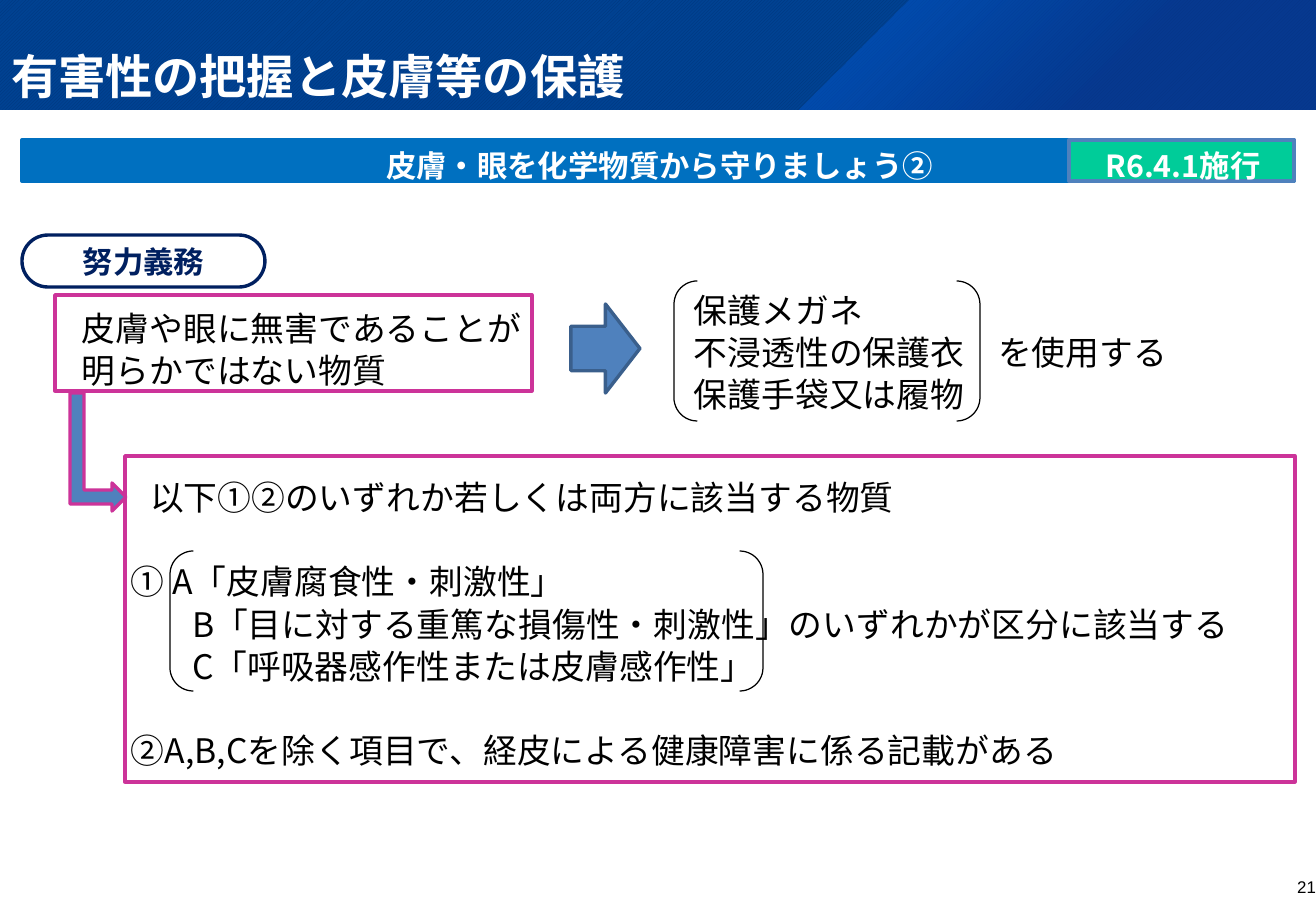
from lxml.etree import SubElement
from pptx import Presentation
from pptx.dml.color import RGBColor
from pptx.enum.dml import MSO_PATTERN
from pptx.enum.shapes import MSO_SHAPE
from pptx.enum.text import MSO_ANCHOR, MSO_AUTO_SIZE, PP_ALIGN
from pptx.oxml import parse_xml
from pptx.oxml.ns import nsdecls, qn
from pptx.util import Pt

EMU_PER_PX = 7526
SLIDE_WIDTH, SLIDE_HEIGHT, HEADER_HEIGHT = 1316, 911, 110
JAPANESE = "Noto Sans CJK JP"
WHITE, BLACK, NAVY = "FFFFFF", "000000", "002060"
BLUE, GREEN, STEEL, MAGENTA = "0070C0", "00CC99", "4F81BD", "CC3399"
LINE_PITCH = 25


def px(length):
    return length * EMU_PER_PX


def color(hex_string):
    return RGBColor.from_string(hex_string)


def place(shape, left, top, width, height):
    shape.left, shape.top = px(left), px(top)
    shape.width, shape.height = px(width), px(height)


def paint(shape, fill=None, line=None, weight=2):
    if fill:
        shape.fill.solid()
        shape.fill.fore_color.rgb = color(fill)
    else:
        shape.fill.background()
    if line:
        shape.line.color.rgb = color(line)
        shape.line.width = Pt(weight)
    else:
        shape.line.fill.background()


def add_figure(slide, kind, box, fill=None, line=None, weight=2):
    figure = slide.shapes.add_shape(kind, *map(px, box))
    figure.shadow.inherit = False
    paint(figure, fill, line, weight)
    return figure


def set_frame(shape, insets, anchor):
    frame = shape.text_frame
    frame.word_wrap = True
    frame.auto_size = MSO_AUTO_SIZE.NONE
    frame.vertical_anchor = anchor
    frame.margin_left, frame.margin_top, frame.margin_right, frame.margin_bottom = map(px, insets)
    return frame


def add_run(paragraph, text, size, hex_color, bold=False, typeface=JAPANESE):
    run = paragraph.add_run()
    run.text = text
    run.font.size = Pt(size)
    run.font.bold = bold
    run.font.color.rgb = color(hex_color)
    run.font.name = typeface
    SubElement(run.font._element, qn("a:ea")).set("typeface", typeface)


def write_label(shape, text, size, hex_color, insets, align=PP_ALIGN.CENTER,
                anchor=MSO_ANCHOR.MIDDLE, bold=True, typeface=JAPANESE):
    paragraph = set_frame(shape, insets, anchor).paragraphs[0]
    paragraph.alignment = align
    add_run(paragraph, text, size, hex_color, bold, typeface)


def write_lines(shape, lines, insets):
    frame = set_frame(shape, insets, MSO_ANCHOR.TOP)
    for number, (text, indent, gap_after) in enumerate(lines):
        paragraph = frame.add_paragraph() if number else frame.paragraphs[0]
        properties = paragraph._p.get_or_add_pPr()
        properties.set("marL", str(px(indent)))
        properties.set("indent", "0")
        SubElement(properties, qn("a:buNone"))
        paragraph.alignment = PP_ALIGN.LEFT
        paragraph.line_spacing = Pt(LINE_PITCH)
        paragraph.space_before = Pt(0)
        paragraph.space_after = Pt(gap_after)
        add_run(paragraph, text, 20, BLACK)


def add_header(slide):
    band = add_figure(slide, MSO_SHAPE.RECTANGLE, (0, 0, SLIDE_WIDTH, HEADER_HEIGHT))
    band.fill.patterned()
    band.fill.pattern = MSO_PATTERN.DARK_UPWARD_DIAGONAL
    band.fill.fore_color.rgb = color("003579")
    band.fill.back_color.rgb = color("004292")

    outline = slide.shapes.build_freeform(910, 0, scale=EMU_PER_PX)
    outline.add_line_segments([(SLIDE_WIDTH, 0), (SLIDE_WIDTH, HEADER_HEIGHT), (799, HEADER_HEIGHT)])
    sheen = outline.convert_to_shape()
    sheen.shadow.inherit = False
    paint(sheen)
    stops = "".join(
        f'<a:gs pos="{position}"><a:srgbClr val="{tone}"><a:alpha val="{alpha}"/></a:srgbClr></a:gs>'
        for position, tone, alpha in [(0, "0064DF", 50000), (62000, "0C338E", 55000)])
    gradient = parse_xml(
        f'<a:gradFill {nsdecls("a")} rotWithShape="1"><a:gsLst>{stops}</a:gsLst>'
        '<a:path path="circle"><a:fillToRect r="100000" b="100000"/></a:path></a:gradFill>')
    properties = sheen._element.spPr
    properties.replace(properties.find(qn("a:noFill")), gradient)

    for depth, part in enumerate((band, sheen), start=2):
        slide.shapes._spTree.insert(depth, part._element)


def add_title(slide):
    title = slide.shapes.title
    place(title, 0, 0, SLIDE_WIDTH, HEADER_HEIGHT)
    write_label(title, "有害性の把握と皮膚等の保護", 28, WHITE, (11, 6, 11, 6),
                PP_ALIGN.LEFT, MSO_ANCHOR.BOTTOM)


def add_banner(slide):
    for text, left, width, fill, line in [
        ("皮膚・眼を化学物質から守りましょう②", 22, 1272, BLUE, BLUE),
        ("R6.4.1施行", 1069, 225, GREEN, STEEL),
    ]:
        bar = add_figure(slide, MSO_SHAPE.RECTANGLE, (left, 140, width, 41), fill, line)
        write_label(bar, text, 18, WHITE, (15, 10, 12, 0))


def add_duty(slide):
    duty = add_figure(slide, MSO_SHAPE.ROUNDED_RECTANGLE, (22, 235, 243, 52), line=NAVY)
    duty.adjustments[0] = 0.5
    write_label(duty, "努力義務", 18, NAVY, (4, 0, 4, 0))

    substance = add_figure(slide, MSO_SHAPE.RECTANGLE, (55, 295, 477, 96), line=MAGENTA)
    write_lines(substance, [("皮膚や眼に無害であることが", 0, 0),
                            ("明らかではない物質", 0, 0)], (27, 11, 0, 0))

    add_figure(slide, MSO_SHAPE.RIGHT_ARROW, (571, 304, 69, 89), STEEL, "3A5F8C")
    equipment = slide.shapes.add_textbox(*map(px, (694, 282, 537, 140)))
    write_lines(equipment, [("保護メガネ", 0, 0),
                            ("不浸透性の保護衣　を使用する", 0, 0),
                            ("保護手袋又は履物", 0, 0)], (0, 6, 0, 0))


def add_conditions(slide):
    conditions = slide.placeholders[1]
    place(conditions, 125, 456, 1170, 326)
    paint(conditions, line=MAGENTA)
    write_lines(conditions, [
        ("以下①②のいずれか若しくは両方に該当する物質", 25, LINE_PITCH),
        ("① A「皮膚腐食性・刺激性」", 6, 0),
        ("B「目に対する重篤な損傷性・刺激性」のいずれかが区分に該当する", 67, 0),
        ("C「呼吸器感作性または皮膚感作性」", 67, LINE_PITCH),
        ("②A,B,Cを除く項目で、経皮による健康障害に係る記載がある", 6, 0),
    ], (0, 19, 0, 0))
    detail_arrow = add_figure(slide, MSO_SHAPE.BENT_UP_ARROW, (39, 424, 118, 56), STEEL, MAGENTA)
    detail_arrow.rotation = 90


def add_brackets(slide):
    for box in [(674, 281, 306, 140), (170, 551, 593, 140)]:
        add_figure(slide, MSO_SHAPE.DOUBLE_BRACKET, box, line=BLACK, weight=0.75)


def add_page_number(slide):
    page = slide.shapes.add_textbox(*map(px, (1009, 863, 307, 48)))
    write_label(page, "21", 10, BLACK, (0, 0, 0, 0), PP_ALIGN.RIGHT, bold=False, typeface="Arial")


def main():
    deck = Presentation()
    deck.slide_width, deck.slide_height = px(SLIDE_WIDTH), px(SLIDE_HEIGHT)
    slide = deck.slides.add_slide(deck.slide_layouts[1])
    add_header(slide)
    add_title(slide)
    add_banner(slide)
    add_duty(slide)
    add_conditions(slide)
    add_brackets(slide)
    add_page_number(slide)
    deck.save("out.pptx")


if __name__ == "__main__":
    main()
